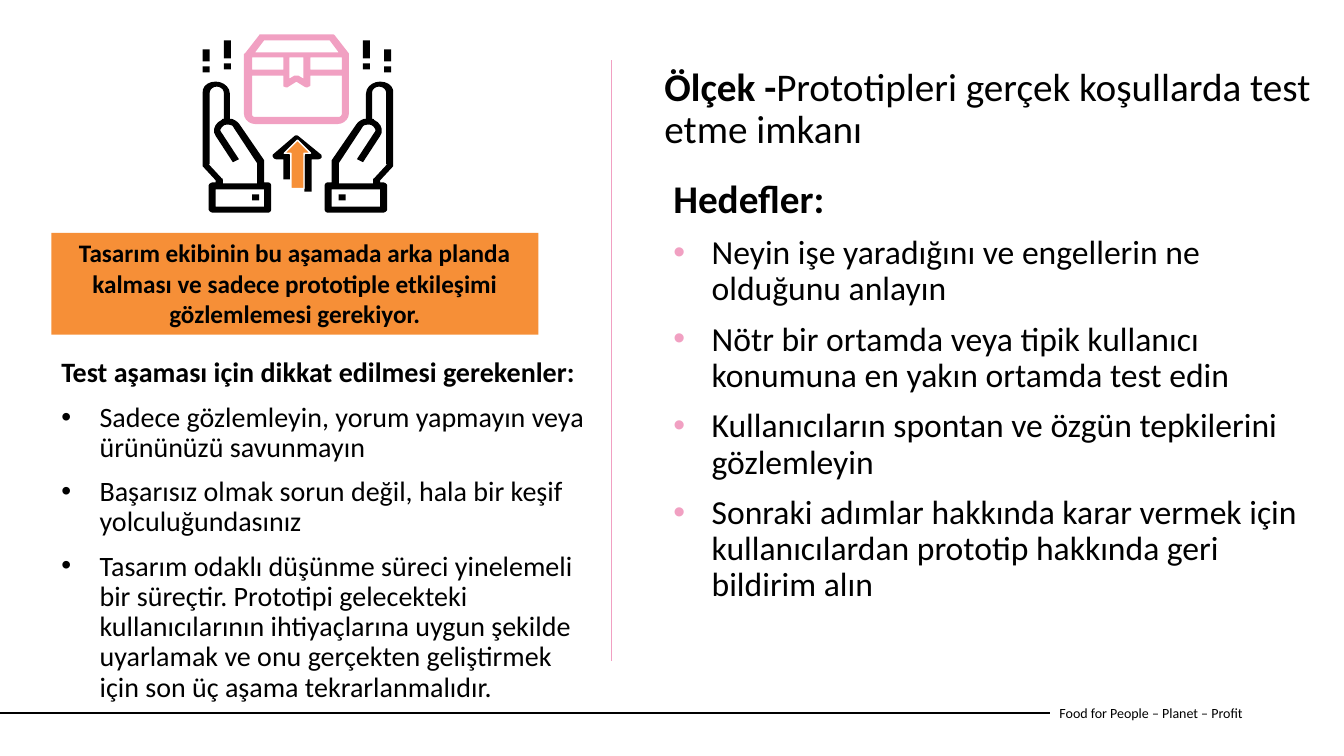
from dataclasses import dataclass

from lxml.etree import SubElement
from pptx import Presentation
from pptx.dml.color import RGBColor
from pptx.enum.shapes import MSO_CONNECTOR, MSO_SHAPE
from pptx.enum.text import MSO_ANCHOR, MSO_AUTO_SIZE, PP_ALIGN
from pptx.oxml.ns import qn
from pptx.util import Emu, Pt

PX = 9144
FONT = "Calibri"
BLACK, WHITE, PINK, ORANGE = "000000", "FFFFFF", "F1A0C2", "F68F37"
HAND_MIRROR = 591
CURVE_STEPS = 5

BOX_PATH = """
M 346 53 L 332 35 C 331 34 330 34 329 34 L 260 34 C 258 34 257 34 257 35
L 243 53 C 242 53 242 54 242 54 L 242 113 C 242 118 247 123 253 123
L 335 123 C 341 123 346 118 346 113 L 346 54 C 346 54 346 53 346 53
M 262 40 L 327 40 L 336 52 L 253 52
M 301 57 L 301 78 L 296 75 C 295 75 293 75 292 75 L 287 78 L 287 57
M 250 57 L 281 57 L 281 69 L 250 69
M 339 113 C 339 115 337 116 336 116 L 253 116 C 251 116 250 115 250 113
L 250 75 L 281 75 L 281 84 C 281 85 281 86 282 86 C 284 87 285 87 286 86
L 294 81 L 302 86 C 304 87 305 87 306 86 C 307 86 308 85 308 84
L 308 75 L 339 75
M 339 69 L 308 69 L 308 57 L 339 57
"""
ARROW_PATH = """
M 296 135 C 295 134 293 134 292 135 L 271 153 C 270 154 270 155 271 156
C 271 157 273 158 274 158 L 281 158 L 281 178 L 288 178 L 288 155
C 288 153 286 152 284 152 L 282 152 L 295 141 L 307 152 L 305 152
C 304 152 302 153 302 155 L 302 190 L 309 190 L 309 158 L 316 158
C 317 158 319 157 319 156 C 319 155 319 153 318 153
"""
HAND_PATH = """
M 377 81 C 370 81 363 86 363 93 L 363 118 C 363 118 362 118 361 118
C 358 119 355 121 353 124 L 329 159 C 329 160 329 160 329 161 L 329 181
L 325 181 C 323 181 322 183 322 184 L 322 208 C 322 209 323 211 325 211
L 380 211 C 382 211 384 209 384 208 L 384 184 C 384 183 382 181 380 181
L 377 181 L 377 179 L 390 165 C 390 165 390 164 390 163 L 390 93
C 391 86 385 81 377 81
M 377 205 L 329 205 L 329 188 L 377 188
M 384 163 L 371 177 C 370 177 370 178 370 179 L 370 182 L 336 182 L 336 162
L 359 127 C 360 125 361 124 363 124 C 365 123 367 124 368 124
C 370 125 371 126 372 128 C 373 129 372 131 371 132 L 354 158 L 360 161
L 377 135 C 381 130 378 122 371 119 C 371 118 370 118 369 118 L 369 92
C 369 89 372 86 376 86 C 380 86 383 89 383 92 L 383 163
"""


@dataclass
class Area:
    left: int
    top: int
    width: int
    height: int

    def emu(self) -> tuple:
        return tuple(Emu(n * PX) for n in (self.left, self.top, self.width, self.height))


@dataclass
class BulletList:
    area: Area
    heading: str
    heading_size: int
    items: tuple
    item_size: int
    bullet_color: str


GOALS = BulletList(
    Area(658, 173, 662, 407), "Hedefler:", 28,
    ("Neyin işe yaradığını ve engellerin ne olduğunu anlayın",
     "Nötr bir ortamda veya tipik kullanıcı konumuna en yakın ortamda test edin",
     "Kullanıcıların spontan ve özgün tepkilerini gözlemleyin",
     "Sonraki adımlar hakkında karar vermek için kullanıcılardan prototip hakkında "
     "geri bildirim alın"),
    24, PINK)
TEST_ADVICE = BulletList(
    Area(51, 351, 543, 376), "Test aşaması için dikkat edilmesi gerekenler:", 20,
    ("Sadece gözlemleyin, yorum yapmayın veya ürününüzü savunmayın",
     "Başarısız olmak sorun değil, hala bir keşif yolculuğundasınız",
     "Tasarım odaklı düşünme süreci yinelemeli bir süreçtir. Prototipi gelecekteki "
     "kullanıcılarının ihtiyaçlarına uygun şekilde uyarlamak ve onu gerçekten "
     "geliştirmek için son üç aşama tekrarlanmalıdır."),
    20, BLACK)


def color(value: str) -> RGBColor:
    return RGBColor.from_string(value)


def format_run(run, size: int, bold: bool = False) -> None:
    run.font.name = FONT
    run.font.size = Pt(size)
    run.font.bold = bold
    run.font.color.rgb = color(BLACK)


def space_paragraph(paragraph) -> None:
    paragraph.line_spacing = 0.9
    paragraph.space_before = Pt(10)


def add_bullet(paragraph, bullet_color: str) -> None:
    properties = paragraph._p.get_or_add_pPr()
    properties.set("marL", str(38 * PX))
    properties.set("indent", str(-38 * PX))
    SubElement(SubElement(properties, qn("a:buClr")), qn("a:srgbClr"), val=bullet_color)
    SubElement(properties, qn("a:buFont"), typeface="Arial")
    SubElement(properties, qn("a:buChar"), char="•")


def add_text_box(shapes, area: Area):
    box = shapes.add_textbox(*area.emu())
    box.text_frame.word_wrap = True
    return box


def add_bullet_list(shapes, bullet_list: BulletList) -> None:
    text_frame = add_text_box(shapes, bullet_list.area).text_frame
    text_frame.text = "\n".join((bullet_list.heading, *bullet_list.items))
    for index, paragraph in enumerate(text_frame.paragraphs):
        space_paragraph(paragraph)
        if index:
            add_bullet(paragraph, bullet_list.bullet_color)
        size = bullet_list.item_size if index else bullet_list.heading_size
        format_run(paragraph.runs[0], size, bold=index == 0)


def paint(shape, fill: str) -> None:
    shape.shadow.inherit = False
    shape.fill.solid()
    shape.fill.fore_color.rgb = color(fill)
    shape.line.fill.background()


def add_block(shapes, kind: MSO_SHAPE, area: Area, fill: str):
    shape = shapes.add_shape(kind, *area.emu())
    paint(shape, fill)
    return shape


def add_line(shapes, start: tuple, end: tuple, line_color: str, width: float):
    line = shapes.add_connector(
        MSO_CONNECTOR.STRAIGHT, *(Emu(n * PX) for n in (*start, *end)))
    line.line.color.rgb = color(line_color)
    line.line.width = Pt(width)
    SubElement(line._element.spPr, qn("a:effectLst"))
    return line


def curve_points(corners: list) -> list:
    points = []
    for step in range(1, CURVE_STEPS + 1):
        t = step / CURVE_STEPS
        weights = ((1 - t) ** 3, 3 * t * (1 - t) ** 2, 3 * t * t * (1 - t), t ** 3)
        points.append(tuple(sum(w * corner[axis] for w, corner in zip(weights, corners))
                            for axis in (0, 1)))
    return points


def read_contours(outline: str) -> list:
    contours = []
    tokens = iter(outline.split())
    for command in tokens:
        count = 3 if command == "C" else 1
        points = [(int(next(tokens)), int(next(tokens))) for _ in range(count)]
        if command == "M":
            contours.append(points)
        elif command == "L":
            contours[-1].extend(points)
        else:
            contours[-1].extend(curve_points([contours[-1][-1], *points]))
    return contours


def add_outline(shapes, outline: str, fill: str, mirror: int = 0) -> None:
    contours = [[((mirror - x if mirror else x) * PX, y * PX) for x, y in contour]
                for contour in read_contours(outline)]
    builder = shapes.build_freeform(*contours[0][0], scale=1.0)
    for index, contour in enumerate(contours):
        if index:
            builder.move_to(*contour[0])
        builder.add_line_segments(contour[1:], close=True)
    paint(builder.convert_to_shape(), fill)


def add_icon(slide) -> None:
    shapes = slide.shapes.add_group_shape().shapes
    add_outline(shapes, BOX_PATH, PINK)
    add_outline(shapes, ARROW_PATH, BLACK)
    for mirror in (0, HAND_MIRROR):
        add_outline(shapes, HAND_PATH, BLACK, mirror)
    mark_columns = {(222, 360): ((40, 18), (63, 6)),
                    (201, 381): ((49, 12), (66, 6)),
                    (250, 336): ((193, 6),)}
    for lefts, marks in mark_columns.items():
        for left in lefts:
            for top, height in marks:
                add_block(shapes, MSO_SHAPE.RECTANGLE, Area(left, top, 7, height), BLACK)
    arrow = add_block(slide.shapes, MSO_SHAPE.UP_ARROW, Area(282, 139, 26, 48), ORANGE)
    arrow.line.color.rgb = color(WHITE)
    arrow.line.width = Pt(1)


def add_title(slide) -> None:
    title = slide.shapes.title
    title.left, title.top, title.width, title.height = Area(649, 62, 662, 125).emu()
    text_frame = title.text_frame
    text_frame.auto_size = MSO_AUTO_SIZE.NONE
    text_frame.vertical_anchor = MSO_ANCHOR.TOP
    paragraph = text_frame.paragraphs[0]
    paragraph.alignment = PP_ALIGN.LEFT
    space_paragraph(paragraph)
    for text, bold in (("Ölçek -", True),
                       ("Prototipleri gerçek koşullarda test etme imkanı", False)):
        run = paragraph.add_run()
        run.text = text
        format_run(run, 28, bold)


def add_footer(slide) -> None:
    footer = add_text_box(slide.shapes, Area(1041, 687, 273, 40))
    footer.text_frame.vertical_anchor = MSO_ANCHOR.MIDDLE
    footer.text_frame.text = "Food for People – Planet – Profit"
    format_run(footer.text_frame.paragraphs[0].runs[0], 10)
    add_line(slide.shapes, (0, 707), (1041, 707), BLACK, 1.5).end_connect(footer, 1)


def add_callout(slide) -> None:
    callout = add_block(slide.shapes, MSO_SHAPE.RECTANGLE, Area(51, 231, 483, 101), ORANGE)
    text_frame = callout.text_frame
    text_frame.text = ("Tasarım ekibinin bu aşamada arka planda kalması ve sadece "
                       "prototiple etkileşimi gözlemlemesi gerekiyor.")
    text_frame.word_wrap = True
    text_frame.auto_size = MSO_AUTO_SIZE.SHAPE_TO_FIT_TEXT
    text_frame.vertical_anchor = MSO_ANCHOR.TOP
    text_frame.paragraphs[0].alignment = PP_ALIGN.CENTER
    format_run(text_frame.paragraphs[0].runs[0], 18, bold=True)


def main() -> None:
    presentation = Presentation()
    presentation.slide_width, presentation.slide_height = Emu(1333 * PX), Emu(750 * PX)
    slide = presentation.slides.add_slide(presentation.slide_layouts[5])
    add_footer(slide)
    add_bullet_list(slide.shapes, GOALS)
    add_title(slide)
    add_bullet_list(slide.shapes, TEST_ADVICE)
    add_callout(slide)
    add_line(slide.shapes, (606, 60), (606, 656), PINK, 0.5)
    add_icon(slide)
    presentation.save("out.pptx")


if __name__ == "__main__":
    main()
